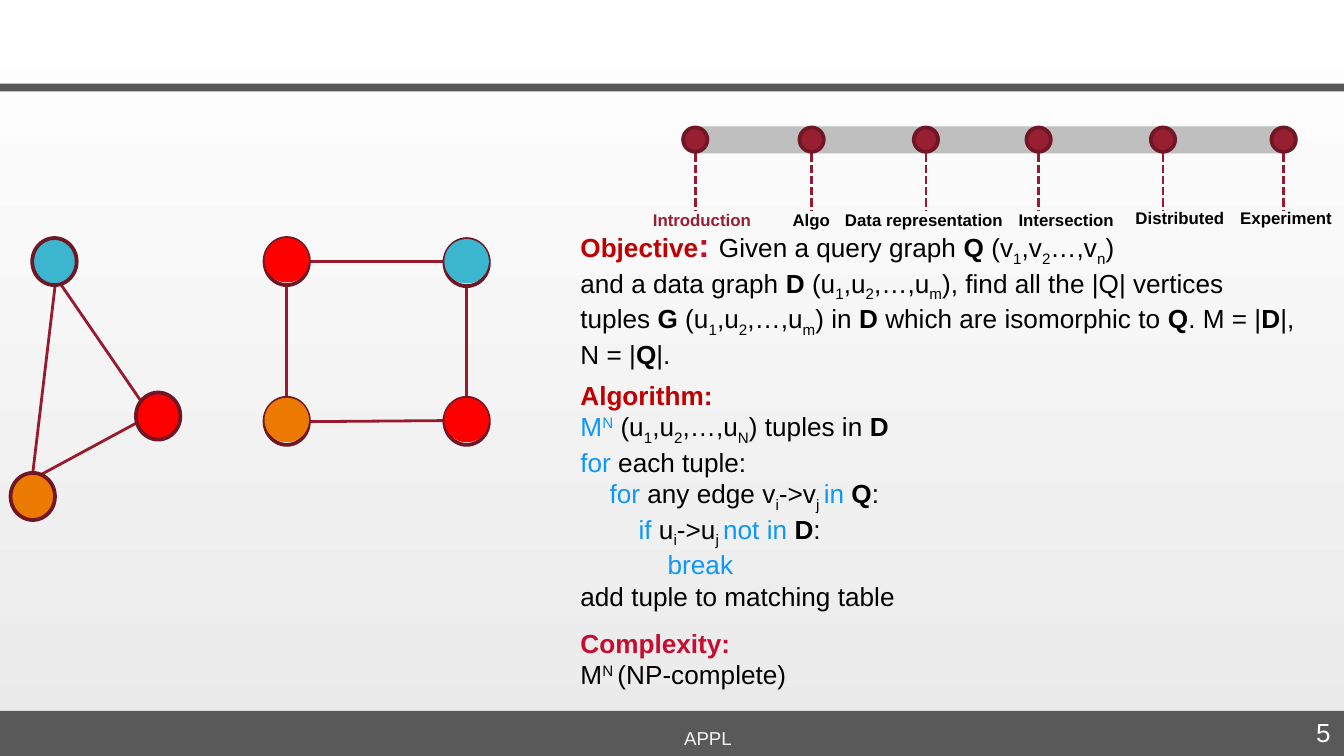
from lxml.etree import SubElement
from pptx import Presentation
from pptx.dml.color import RGBColor
from pptx.enum.dml import MSO_LINE_DASH_STYLE as Dash
from pptx.enum.shapes import MSO_CONNECTOR as Connector, MSO_SHAPE as Shape
from pptx.enum.text import MSO_ANCHOR as Anchor, PP_ALIGN as Align
from pptx.oxml.ns import qn
from pptx.util import Cm, Pt

COLORS = {name: RGBColor.from_string(value) for name, value in {
    "gray": "595959", "bar": "BFBFBF", "light": "F2F2F2", "white": "FFFFFF",
    "shade": "EAEAEA", "black": "000000", "heading": "C00000",
    "crimson": "C60C30", "keyword": "0C97FF", "stop": "981E32",
    "edge": "981A2F", "outline": "701625",
    "red": "FF0000", "teal": "3CB6CE", "orange": "EC7A00",
}.items()}

deck = Presentation()
deck.slide_width, deck.slide_height = Cm(25.4), Cm(14.29)
page = deck.slides.add_slide(deck.slide_layouts[6])


def add_shape(kind, left, top, width, height, fill=None, outline=False):
    shape = page.shapes.add_shape(kind, Cm(left), Cm(top), Cm(width), Cm(height))
    shape.shadow.inherit = False
    if fill:
        shape.fill.solid()
        shape.fill.fore_color.rgb = COLORS[fill]
    else:
        shape.fill.background()
    if outline:
        shape.line.color.rgb = COLORS["outline"]
        shape.line.width = Pt(2)
    else:
        shape.line.fill.background()
    return shape


def add_text(left, top, width, height, lines, size=14, color="black"):
    """Markup {xText}: b bold, - subscript, + superscript, k keyword,
    e raised keyword, h heading, c crimson heading, : large colon.
    Each line is a pair of indent level and markup."""
    box = page.shapes.add_textbox(Cm(left), Cm(top), Cm(width), Cm(height))
    frame = box.text_frame
    frame.word_wrap = True
    for index, (level, markup) in enumerate(lines):
        para = frame.add_paragraph() if index else frame.paragraphs[0]
        if level:
            para._p.get_or_add_pPr().set("marL", str(Cm(0.55 * level)))
        for piece in markup.split("{"):
            marked, closing, rest = piece.partition("}")
            parts = [(marked[0], marked[1:]), ("", rest)] if closing else [("", piece)]
            for style, words in parts:
                if not words:
                    continue
                span = para.add_run()
                span.text = words
                font = span.font
                font.name = "Arial"
                font.size = Pt(18 if style == ":" else size)
                font.bold = style in ("b", "h", "c", ":")
                shade = {"k": "keyword", "e": "keyword", "h": "heading",
                         "c": "crimson", ":": "crimson"}.get(style, color)
                font.color.rgb = COLORS[shade]
                raise_by = {"-": -25000, "+": 30000, "e": 30000}.get(style)
                if raise_by:
                    span._r.get_or_add_rPr().set("baseline", str(raise_by))
    return box


# Background, header rule and footer
background = page.background.fill
background.gradient()
background.gradient_angle = 90
for stop, name in zip(background.gradient_stops, ("shade", "white")):
    stop.color.rgb = COLORS[name]
add_shape(Shape.RECTANGLE, 0, 13.44, 25.4, 0.85, "gray")
add_shape(Shape.RECTANGLE, 0, 1.58, 25.4, 0.15, "gray")
footer = add_text(4.83, 13.42, 17.1, 0.87, [(0, "APPL")], 10, "light")
footer.text_frame.vertical_anchor = Anchor.BOTTOM
footer.text_frame.paragraphs[0].alignment = Align.CENTER
number = add_text(21.95, 13.42, 3.45, 0.87, [(0, "5")], 14, "white")
number.text_frame.paragraphs[0].alignment = Align.RIGHT

# Timeline bar
add_shape(Shape.ROUNDED_RECTANGLE, 12.9, 2.39, 11.63, 0.51, "bar").adjustments[0] = 0.5

# Edges of both graphs, then the timeline ticks
stop_centers = [13.14, 15.34, 17.5, 19.63, 21.98, 24.26]
graph_edges = [
    (1.14, 5.36, 2.67, 7.59), (2.57, 8, 0.74, 8.99), (0.61, 9.02, 1.04, 5.41),
    (5.82, 4.95, 8.41, 4.95), (5.41, 5.38, 5.41, 7.52),
    (5.82, 7.97, 8.41, 7.95), (8.81, 7.52, 8.81, 5.38),
]
ticks = [(center, 2.9, center, 3.98) for center in stop_centers]
for edge in graph_edges + ticks:
    line = page.shapes.add_connector(Connector.STRAIGHT, *map(Cm, edge))
    line.line.color.rgb = COLORS["edge"]
    line.line.width = Pt(1.5)
    if edge in ticks:
        line.line.dash_style = Dash.SQUARE_DOT
    SubElement(line._element.spPr, qn("a:effectLst"))

# Nodes of the triangle graph
for left, top, fill in [(0.61, 4.5, "teal"), (2.57, 7.42, "red"), (0.2, 8.94, "orange")]:
    add_shape(Shape.OVAL, left, top, 0.84, 0.89, fill, outline=True)

# Nodes of the square graph: a disc over each ring
for left, top, fill in [(5, 4.5, "red"), (8.4, 4.52, "teal"),
                        (5, 7.52, "orange"), (8.4, 7.52, "red")]:
    add_shape(Shape.OVAL, left, top, 0.84, 0.89, outline=True)
    add_shape(Shape.OVAL, left, top, 0.84, 0.84, fill)

# Timeline stops and labels
labels = [("Introduction", 12.09, 3.84, 3), ("Algo", 14.73, 3.84, 3),
          ("Data representation", 15.72, 3.84, 5.03), ("Intersection", 19, 3.84, 5.03),
          ("Distributed", 21.21, 3.81, 3), ("Experiment", 23.19, 3.8, 3)]
for center, (label, left, top, width) in zip(stop_centers, labels):
    add_shape(Shape.OVAL, center - 0.23, 2.41, 0.46, 0.46, "stop", outline=True)
    color = "stop" if label == "Introduction" else "black"
    add_text(left, top, width, 0.64, [(0, "{b" + label + "}")], 9, color)

# Objective, algorithm and complexity
add_text(10.72, 4.11, 14.05, 2.82, [
    (0, "{hObjective}{:: }Given a query graph {bQ} (v{-1},v{-2}…,v{-n})"),
    (0, "and a data graph {bD }(u{-1},u{-2},…,u{-m}), find all the |Q| vertices tuples "
        "{bG} (u{-1},u{-2},…,u{-m}) in {bD} which are isomorphic to {bQ}. "
        "M = |{bD}|, N = |{bQ}|."),
])
add_text(10.72, 7.04, 12.7, 5.21, [
    (0, "{hAlgorithm:}"),
    (0, "{kM}{eN} (u{-1},u{-2},…,u{-N}) tuples in {bD}"),
    (0, "{kfor} each tuple:"),
    (1, "{kfor} any edge v{-i}->v{-j }{kin }{bQ}:"),
    (2, "{kif }u{-i}->u{-j }{knot in }{bD}:"),
    (3, "{kbreak}"),
    (0, "add tuple to matching table"),
])
add_text(10.72, 11.73, 9.17, 2.24, [(0, "{cComplexity:}"), (0, "M{+N }(NP-complete)")])

deck.save("out.pptx")
